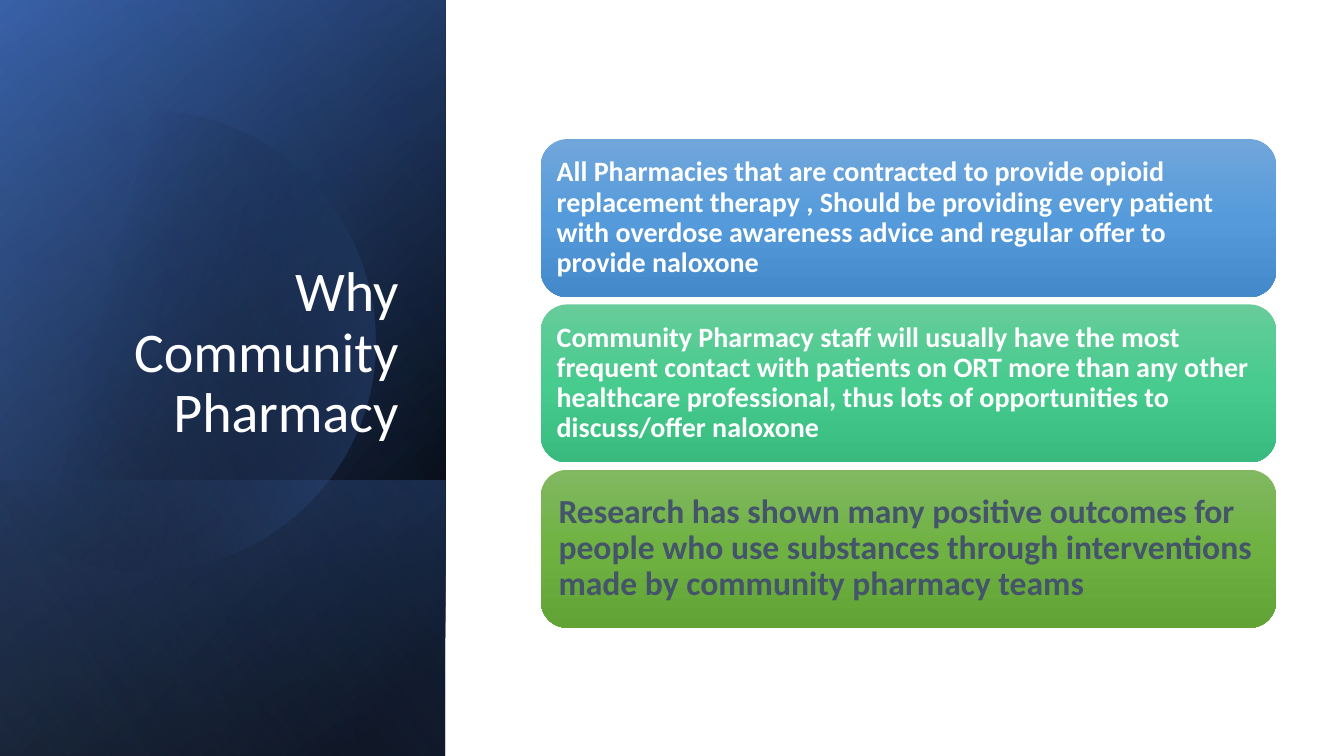
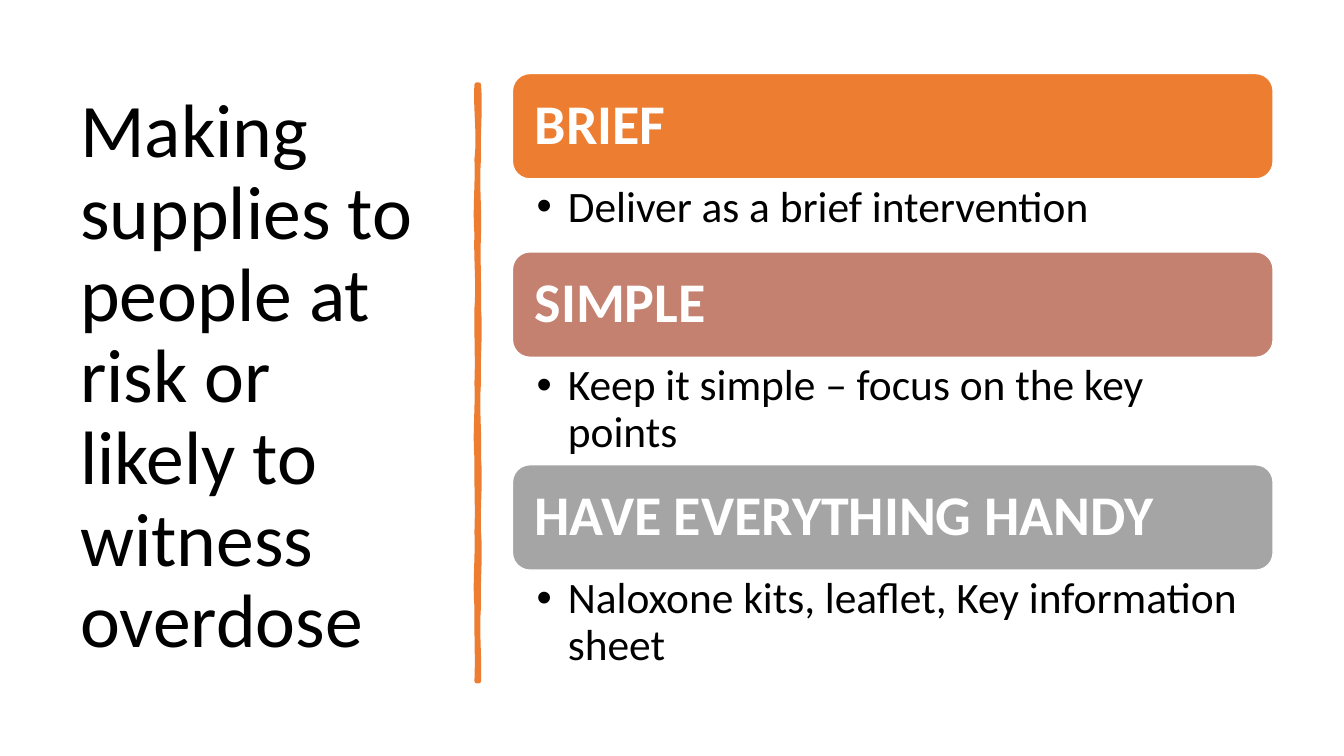
from dataclasses import dataclass

from lxml.etree import SubElement
from pptx import Presentation
from pptx.dml.color import RGBColor
from pptx.enum.shapes import MSO_SHAPE
from pptx.enum.text import MSO_ANCHOR, MSO_AUTO_SIZE, PP_ALIGN
from pptx.oxml.ns import qn
from pptx.util import Inches, Pt

WIDE, HIGH = Inches(13.33), Inches(7.5)


@dataclass(frozen=True)
class Theme:
    font: str = "Calibri"
    black: str = "000000"
    white: str = "FFFFFF"
    navy: str = "2F5597"
    blue: str = "4472C4"
    pale: str = "8FAADC"
    slate: str = "44546A"
    orange: str = "ED7D31"
    rose: str = "C48170"
    grey: str = "A5A5A5"
    small: int = 20
    mid: int = 24
    item: int = 31
    head: int = 40
    big: int = 54


THEME = Theme()


# Lengths: percent of the slide's width and height
def across(share):
    return round(WIDE * share / 100)


def down(share):
    return round(HIGH * share / 100)


def place(x, y, w, h):
    return across(x), down(y), across(w), down(h)


# Fills and text
def shade(shape, stops, angle):
    """Fill with (position, colour, opacity) stops, all in percent."""
    shape.fill.gradient()
    grad = shape._element.spPr.find(qn("a:gradFill"))
    grad.find(qn("a:lin")).set("ang", str(angle * 60000))
    ramp = grad.find(qn("a:gsLst"))
    ramp.clear()
    for spot, tone, alpha in stops:
        stop = SubElement(ramp, qn("a:gs"), pos=str(spot * 1000))
        color = SubElement(stop, qn("a:srgbClr"), val=tone)
        if alpha < 100:
            SubElement(color, qn("a:alpha"), val=str(alpha * 1000))


def paint(shape, tone):
    shape.fill.solid()
    shape.fill.fore_color.rgb = RGBColor.from_string(tone)


def edge(shape, tone, width):
    shape.line.color.rgb = RGBColor.from_string(tone)
    shape.line.width = Pt(width)


def write(shape, text, size, tone, bold=False, align=PP_ALIGN.LEFT,
          anchor=MSO_ANCHOR.MIDDLE, inset=(0.1, 0.05, 0.1, 0.05), bullet=False):
    frame = shape.text_frame
    frame.text = text
    frame.word_wrap = True
    frame.auto_size = MSO_AUTO_SIZE.NONE
    frame.vertical_anchor = anchor
    (frame.margin_left, frame.margin_top,
     frame.margin_right, frame.margin_bottom) = map(Inches, inset)
    para = frame.paragraphs[0]
    para.alignment = align
    para.line_spacing = 0.9
    if bullet:
        props = para._p.get_or_add_pPr()
        props.set("marL", str(Inches(0.31)))
        props.set("indent", str(-Inches(0.31)))
        SubElement(props, qn("a:buFont"), typeface="Arial")
        SubElement(props, qn("a:buChar"), char="•")
    font = para.runs[0].font
    font.name, font.size, font.bold = THEME.font, Pt(size), bold
    font.color.rgb = RGBColor.from_string(tone)


# Kinds of element
def title(slide, text, box, size, tone, **style):
    head = slide.shapes.title
    head.left, head.top, head.width, head.height = place(*box)
    write(head, text, size, tone, **style)
    slide.shapes._spTree.append(head._element)


def panel(slide, box, stops, angle):
    block = slide.shapes.add_shape(MSO_SHAPE.RECTANGLE, *place(*box))
    block.shadow.inherit = False
    block.line.fill.background()
    shade(block, stops, angle)


def outline(slide, start, legs):
    """Draw legs of one point as lines and legs of three as curves."""
    pen = slide.shapes.build_freeform(*start)
    pen.add_line_segments([spot for leg in legs for spot in leg], close=True)
    shape = pen.convert_to_shape()
    shape.shadow.inherit = False
    lines = iter(list(shape._element.iter(qn("a:lnTo"))))
    for leg in legs:
        first, *rest = [next(lines) for _ in leg]
        if rest:
            first.tag = qn("a:cubicBezTo")
            for line in rest:
                first.append(line[0])
                line.getparent().remove(line)
    return shape


def disc(slide, stops, angle):
    """A circle cut off at the left side of the slide."""
    legs = [
        [(18.5, 14.9), (25.1, 23.6), (27.2, 36.7)],
        [(29.9, 52.9), (24.6, 69.7), (15.5, 74.4)],
        [(10.1, 77.3), (4.4, 75), (0, 68.8)],
        [(0, 21.5)],
        [(1.7, 18.9), (3.8, 17.1), (6, 15.9)],
        [(7.7, 15.1), (9.5, 14.7), (11.2, 14.7)],
    ]
    spots = [[(across(x), down(y)) for x, y in leg] for leg in legs]
    shape = outline(slide, (across(11.2), down(14.7)), spots)
    shape.line.fill.background()
    shade(shape, stops, angle)


def side(x, start, end, sways):
    """Curves from start to end that bulge by each sway in turn."""
    step = (end - start) / len(sways)
    return [[(round(x + Inches(sway)), round(start + step * (row + 1 / 3))),
             (round(x - Inches(sway / 2)), round(start + step * (row + 2 / 3))),
             (round(x), round(start + step * (row + 1)))]
            for row, sway in enumerate(sways)]


def wavy(slide, x, top, base, tone):
    """An upright brush stroke with two uneven sides."""
    mid, half = across(x), Inches(0.01)
    high, low = down(top), down(base)
    legs = (side(mid + half, high, low,
                 (0.02, -0.02, -0.01, 0.02, -0.02, 0.02, 0.02, -0.02))
            + [[(mid - half, low)]]
            + side(mid - half, low, high,
                   (0.01, -0.02, 0.01, -0.02, 0.01, 0.02, -0.02, 0.03)))
    stroke = outline(slide, (mid + half, high), legs)
    paint(stroke, tone)
    edge(stroke, tone, 3.25)


def card(slide, box, text, size, tone, inset):
    shape = slide.shapes.add_shape(MSO_SHAPE.ROUNDED_RECTANGLE, *place(*box))
    shape.shadow.inherit = False
    shape.line.fill.background()
    write(shape, text, size, tone, bold=True, inset=(inset,) * 4)
    return shape


def point(slide, box, text):
    note = slide.shapes.add_textbox(*place(*box))
    write(note, text, THEME.item, THEME.black, anchor=MSO_ANCHOR.TOP,
          inset=(0.24, 0.06, 0.31, 0.06), bullet=True)


# Slides
def why(slide):
    t = THEME
    band = (0, 0, 33.15, 100)
    panel(slide, band, [(8, t.black, 100), (100, t.navy, 100)], 220)
    panel(slide, band, [(0, t.black, 0), (99, t.blue, 46)], 240)
    panel(slide, (0, 63.5, 33.15, 36.5),
          [(2, t.blue, 29), (100, t.black, 30)], 140)
    disc(slide, [(29, t.black, 0), (100, t.blue, 43)], 14)
    panel(slide, band, [(0, t.black, 0), (99, t.pale, 11)], 150)
    title(slide, "Why Community Pharmacy", (4.8, 24.5, 25.6, 35), t.head,
          t.white, align=PP_ALIGN.RIGHT, anchor=MSO_ANCHOR.BOTTOM)

    cards = [
        ("All Pharmacies that are contracted to provide opioid replacement "
         "therapy , Should be providing every patient with overdose awareness "
         "advice and regular offer to provide naloxone",
         t.small, t.white, 0.08, ("71A6DB", "559BDB", "448ACA")),
        ("Community Pharmacy staff will usually have the most frequent contact "
         "with patients on ORT more than any other healthcare professional, "
         "thus lots of opportunities to discuss/offer naloxone",
         t.small, t.white, 0.08, ("67CC9A", "47CB8E", "39BB7F")),
        ("Research has shown many positive outcomes for people who use "
         "substances through interventions made by community pharmacy teams",
         t.mid, t.slate, 0.1, ("81B861", "6FB242", "62A336")),
    ]
    for row, (text, size, tone, inset, tones) in enumerate(cards):
        box = (40.25, 18.4 + 21.87 * row, 54.7, 20.9)
        shape = card(slide, box, text, size, tone, inset)
        shade(shape, [(50 * n, hue, 100) for n, hue in enumerate(tones)], 90)


def supply(slide):
    t = THEME
    title(slide, "Making supplies to people at risk or likely to witness overdose",
          (5.22, 9.3, 28, 81.5), t.big, t.black)
    wavy(slide, 35.55, 11.2, 90.1, t.orange)

    parts = [
        ("BRIEF", t.orange, "Deliver as a brief intervention", 9.65),
        ("SIMPLE", t.rose, "Keep it simple – focus on the key points", 14.2),
        ("HAVE EVERYTHING HANDY", t.grey,
         "Naloxone kits, leaflet, Key information sheet", 14.2),
    ]
    x, y, w, bar = 38.13, 9.72, 56.6, 13.95
    for name, tone, text, room in parts:
        shape = card(slide, (x, y, w, bar), name, t.head, t.white, 0.17)
        paint(shape, tone)
        edge(shape, t.white, 1)
        point(slide, (x, y + bar, w, room), text)
        y += bar + room


def main():
    deck = Presentation()
    deck.slide_width, deck.slide_height = WIDE, HIGH
    for build in (why, supply):
        build(deck.slides.add_slide(deck.slide_layouts[5]))
    deck.save("out.pptx")


if __name__ == "__main__":
    main()
